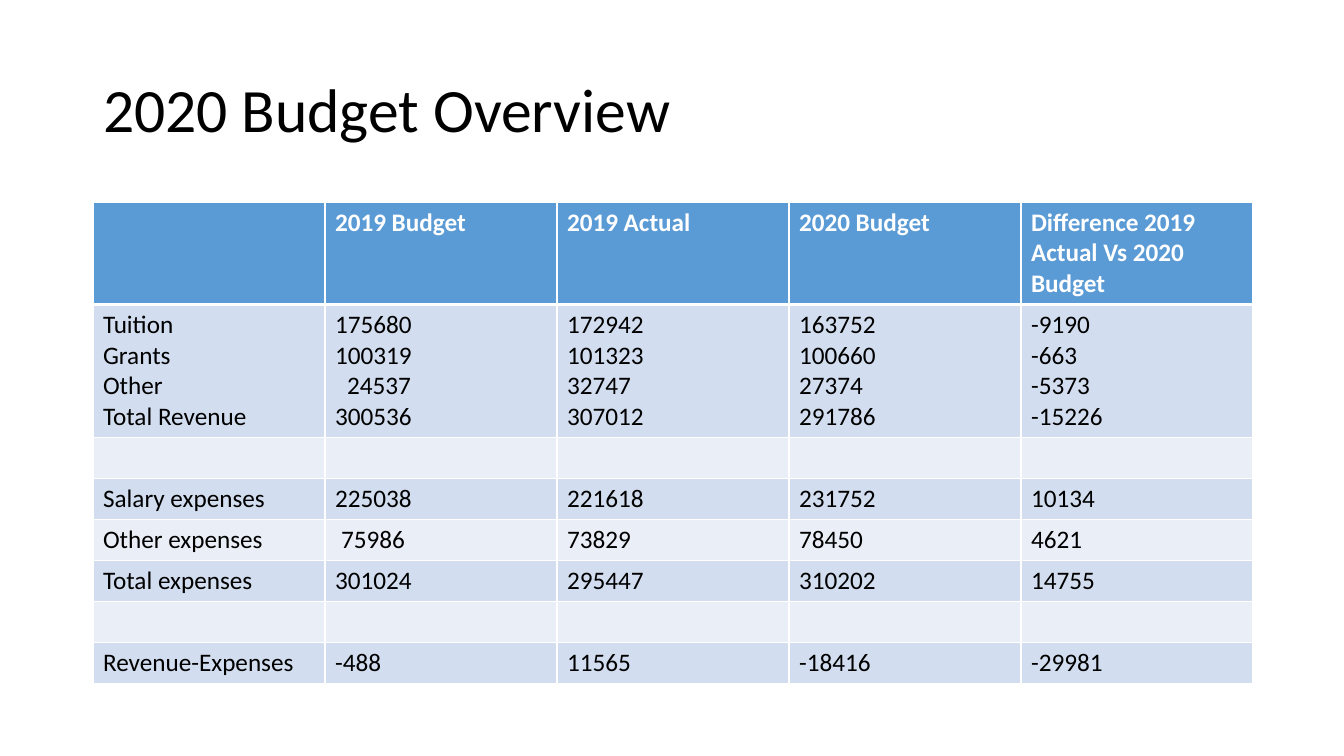
from lxml.etree import SubElement
from pptx import Presentation
from pptx.dml.color import RGBColor
from pptx.enum.text import MSO_ANCHOR, PP_ALIGN
from pptx.oxml.ns import qn
from pptx.util import Pt

EMU_PER_PX = 914400 / 100.8
SLIDE_SIZE = (1344, 756)
TITLE_BOX = (93, 40, 1160, 146)
TABLE_BOX = (93, 202, 1160, 479)
HEADER_H, REVENUE_H = 101, 132

FONT = "Calibri"
BLACK = RGBColor(0x00, 0x00, 0x00)
WHITE = RGBColor(0xFF, 0xFF, 0xFF)
HEADER_BLUE = RGBColor(0x5B, 0x9B, 0xD5)
BAND_DARK = RGBColor(0xD2, 0xDE, 0xEF)
BAND_LIGHT = RGBColor(0xEA, 0xEF, 0xF7)

BUDGET = [
    ["", "2019 Budget", "2019 Actual", "2020 Budget",
     "Difference 2019 Actual Vs 2020 Budget"],
    ["Tuition\nGrants\nOther\nTotal Revenue",
     "175680\n100319\n24537\n300536",
     "172942\n101323\n32747\n307012",
     "163752\n100660\n27374\n291786",
     "-9190\n-663\n-5373\n-15226"],
    [""] * 5,
    ["Salary expenses", "225038", "221618", "231752", "10134"],
    ["Other expenses", "75986", "73829", "78450", "4621"],
    ["Total expenses", "301024", "295447", "310202", "14755"],
    [""] * 5,
    ["Revenue-Expenses", "-488", "11565", "-18416", "-29981"],
]
INDENTS = {"24537": 12, "75986": 6}


def px(n):
    return round(n * EMU_PER_PX)


def set_font(font, color, **formats):
    for name, value in {"name": FONT, **formats}.items():
        setattr(font, name, value)
    font.color.rgb = color


def set_borders(cell, top, bottom):
    """Draw white cell borders; top and bottom widths are in points."""
    tcPr = cell._tc.get_or_add_tcPr()
    for side, width in {"L": 1, "R": 1, "T": top, "B": bottom}.items():
        ln = SubElement(tcPr, qn(f"a:ln{side}"), w=str(Pt(width)))
        fill = SubElement(ln, qn("a:solidFill"))
        SubElement(fill, qn("a:srgbClr"), val=str(WHITE))


def add_title(s, box):
    title = s.shapes.title
    title.left, title.top, title.width, title.height = map(px, box)
    tf = title.text_frame
    tf.text = "2020 Budget Overview"
    tf.word_wrap = True
    tf.vertical_anchor = MSO_ANCHOR.MIDDLE
    p = tf.paragraphs[0]
    p.alignment = PP_ALIGN.LEFT
    p.line_spacing = 0.9
    set_font(p.runs[0].font, BLACK, size=Pt(44))


def fill_cell(cell, text, row):
    header = row == 0
    set_borders(cell, top=3 if row == 1 else 1, bottom=3 if header else 1)
    cell.fill.solid()
    band = BAND_DARK if row % 2 else BAND_LIGHT
    cell.fill.fore_color.rgb = HEADER_BLUE if header else band
    cell.text = text
    for p in cell.text_frame.paragraphs:
        set_font(p.font, WHITE if header else BLACK, size=Pt(18), bold=header)
        for r in p.runs:
            set_font(r.font, WHITE if header else BLACK, size=Pt(18), bold=header)
        if p.text in INDENTS:
            p._p.get_or_add_pPr().set("marL", str(px(INDENTS[p.text])))


def add_budget_table(s, box):
    left, top, width, height = box
    rows, cols = len(BUDGET), len(BUDGET[0])
    table = s.shapes.add_table(rows, cols, *map(px, box)).table
    line_h = (height - HEADER_H - REVENUE_H) // (rows - 2)
    for col in table.columns:
        col.width = px(width // cols)
    for i, texts in enumerate(BUDGET):
        table.rows[i].height = px({0: HEADER_H, 1: REVENUE_H}.get(i, line_h))
        for j, text in enumerate(texts):
            fill_cell(table.cell(i, j), text, i)


def main():
    prs = Presentation()
    prs.slide_width, prs.slide_height = map(px, SLIDE_SIZE)
    s = prs.slides.add_slide(prs.slide_layouts[5])
    add_title(s, TITLE_BOX)
    add_budget_table(s, TABLE_BOX)
    prs.save("out.pptx")


if __name__ == "__main__":
    main()
